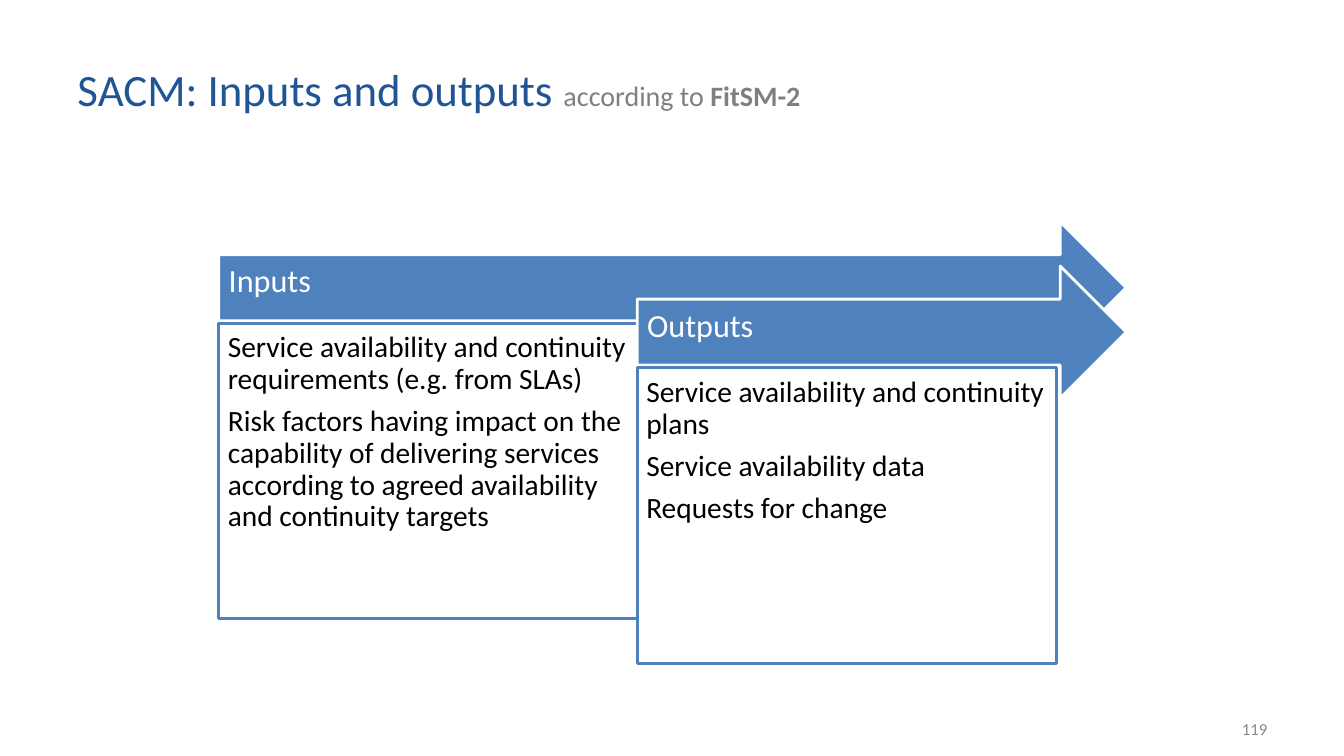
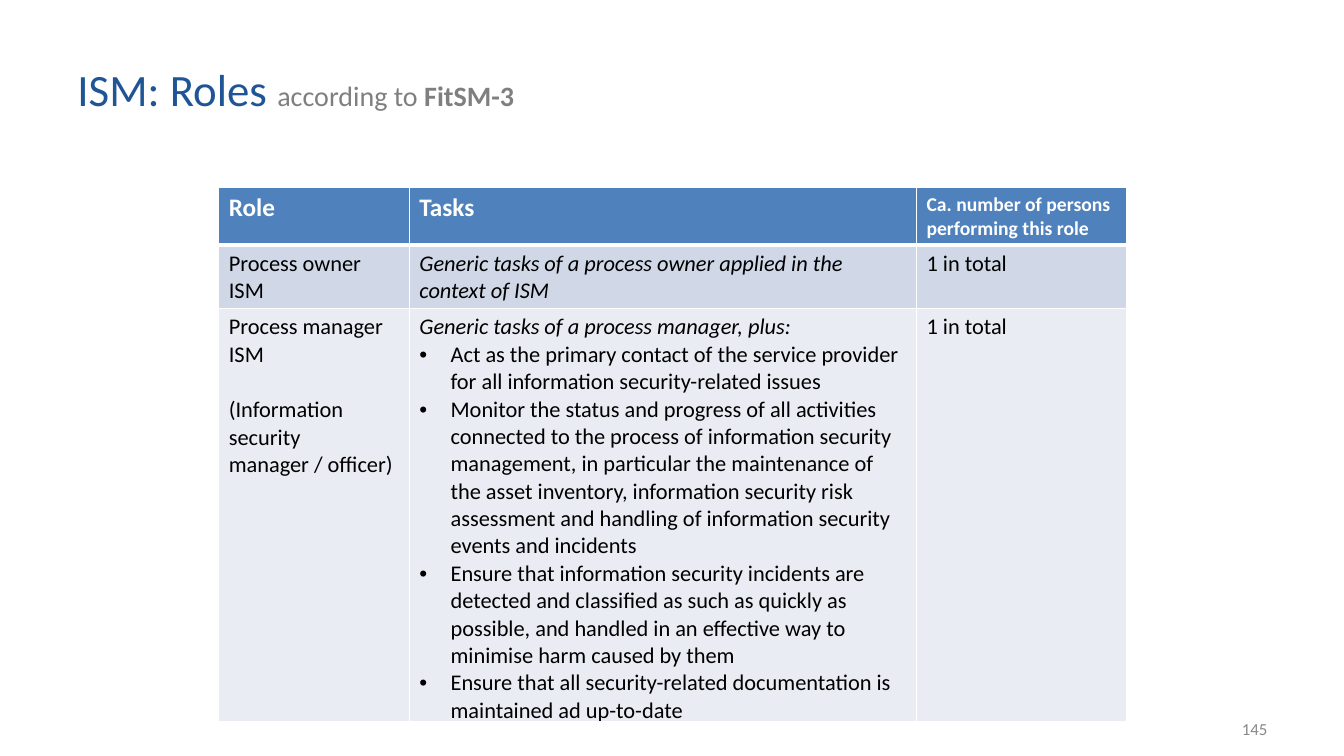
from dataclasses import dataclass

from lxml import etree
from pptx import Presentation
from pptx.dml.color import RGBColor
from pptx.enum.shapes import MSO_SHAPE
from pptx.enum.text import MSO_ANCHOR, PP_ALIGN
from pptx.oxml.ns import qn
from pptx.util import Pt

PX = 9144
ARROW = MSO_SHAPE.RIGHT_ARROW
RECTANGLE = MSO_SHAPE.RECTANGLE
LEFT, RIGHT = PP_ALIGN.LEFT, PP_ALIGN.RIGHT
TOP, MIDDLE = MSO_ANCHOR.TOP, MSO_ANCHOR.MIDDLE


@dataclass(frozen=True)
class Theme:
    font: str = "Calibri"
    title: str = "205595"
    subtitle: str = "7F7F7F"
    number: str = "888888"
    accent: str = "4F81BD"
    white: str = "FFFFFF"
    text: str = "000000"
    rows: tuple = ("4F81BD", "D0D8E7", "E9ECF3")
    title_size: int = 32
    subtitle_size: int = 20
    number_size: int = 12
    arrow_size: int = 23
    panel_size: int = 21
    head_size: int = 18
    small_head_size: int = 14
    cell_size: int = 16
    outline: int = 2
    thin: float = 0.96
    thick: int = 3


THEME = Theme()
CONTENT_LEFT, CONTENT_WIDTH = 217, 900

PANELS = (
    ("Inputs", (
        "Service availability and continuity requirements (e.g. from SLAs)",
        "Risk factors having impact on the capability of delivering services "
        "according to agreed availability and continuity targets",
    )),
    ("Outputs", (
        "Service availability and continuity plans",
        "Service availability data",
        "Requests for change",
    )),
)

HEAD = {"size": THEME.head_size, "color": THEME.white, "bold": True}
BODY = {"size": THEME.cell_size}
GENERIC = {**BODY, "italic": True}
BULLET = {**BODY, "bullet": True}

ROLE_ROWS = (
    (
        [("Role", HEAD)],
        [("Tasks", HEAD)],
        [("Ca. number of persons performing this role",
          {**HEAD, "size": THEME.small_head_size})],
    ),
    (
        [("Process owner ISM", BODY)],
        [("Generic tasks of a process owner applied in the context of ISM", GENERIC)],
        [("1 in total", BODY)],
    ),
    (
        [("Process manager ISM", BODY),
         ("(Information security manager / officer)", {**BODY, "before": 20})],
        [("Generic tasks of a process manager, plus:", GENERIC),
         ("Act as the primary contact of the service provider for all "
          "information security-related issues", BULLET),
         ("Monitor the status and progress of all activities connected to the "
          "process of information security management, in particular the "
          "maintenance of the asset inventory, information security risk "
          "assessment and handling of information security events and incidents",
          BULLET),
         ("Ensure that information security incidents are detected and classified "
          "as such as quickly as possible, and handled in an effective way to "
          "minimise harm caused by them", BULLET),
         ("Ensure that all security-related documentation is maintained ad "
          "up-to-date", BULLET)],
        [("1 in total", BODY)],
    ),
)


def rgb(color):
    return RGBColor.from_string(color)


def px(*lengths):
    return [length * PX for length in lengths]


def add_bullet(paragraph):
    properties = paragraph._p.get_or_add_pPr()
    properties.set("marL", str(31 * PX))
    properties.set("indent", str(-31 * PX))
    color = etree.SubElement(properties, qn("a:buClr"))
    etree.SubElement(color, qn("a:srgbClr"), val=THEME.text)
    etree.SubElement(properties, qn("a:buFont"), typeface="Arial")
    etree.SubElement(properties, qn("a:buChar"), char="•")


def add_text(frame, text, size, color=THEME.text, bold=False, italic=False,
             align=LEFT, before=0, spacing=None, bullet=False, joined=False):
    paragraph = frame.paragraphs[-1]
    if paragraph.runs and not joined:
        paragraph = frame.add_paragraph()
    if not joined:
        paragraph.alignment = align
        if before:
            paragraph.space_before = Pt(before)
        if spacing:
            paragraph.line_spacing = spacing
        if bullet:
            add_bullet(paragraph)
    span = paragraph.add_run()
    span.text = text
    font = span.font
    font.name, font.size = THEME.font, Pt(size)
    font.bold, font.italic = bold, italic
    font.color.rgb = rgb(color)


def set_frame(frame, anchor, insets):
    frame.word_wrap = True
    frame.vertical_anchor = anchor
    (frame.margin_left, frame.margin_top,
     frame.margin_right, frame.margin_bottom) = px(*insets)
    return frame


def add_box(page, left, top, width, height):
    box = page.shapes.add_textbox(*px(left, top, width, height))
    return set_frame(box.text_frame, MIDDLE, (10, 5, 10, 5))


def add_outlined(page, kind, position, fill, line, anchor, insets):
    shape = page.shapes.add_shape(kind, *px(*position))
    shape.shadow.inherit = False
    shape.fill.solid()
    shape.fill.fore_color.rgb = rgb(fill)
    shape.line.color.rgb = rgb(line)
    shape.line.width = Pt(THEME.outline)
    return set_frame(shape.text_frame, anchor, insets)


def add_page(deck, title, standard, number):
    page = deck.slides.add_slide(deck.slide_layouts[6])
    heading = add_box(page, 67, 30, 991, 115)
    subtitle = {"size": THEME.subtitle_size, "color": THEME.subtitle, "joined": True}
    add_text(heading, f"{title} ", size=THEME.title_size, color=THEME.title)
    add_text(heading, "according to ", **subtitle)
    add_text(heading, standard, bold=True, **subtitle)
    footer = add_box(page, 956, 703, 311, 40)
    add_text(footer, number, size=THEME.number_size, color=THEME.number, align=RIGHT)
    return page


def add_panel(page, index, name, items):
    shift = 415 * index
    left, top = CONTENT_LEFT + shift, 220 + 44 * index
    arrow = add_outlined(page, ARROW, (left, top, CONTENT_WIDTH - shift, 131),
                         THEME.accent, THEME.white, MIDDLE, (10, 10, 28, 21))
    add_text(arrow, name, size=THEME.arrow_size, color=THEME.white, spacing=0.9)
    panel = add_outlined(page, RECTANGLE, (left, top + 101, 416, 293),
                         THEME.white, THEME.accent, TOP, (9, 9, 9, 9))
    for position, item in enumerate(items):
        add_text(panel, item, size=THEME.panel_size, spacing=0.9,
                 before=7.3 if position else 0)


def add_border(cell, side, width):
    properties = cell._tc.get_or_add_tcPr()
    line = etree.SubElement(properties, qn(f"a:ln{side}"), w=str(int(Pt(width))))
    fill = etree.SubElement(line, qn("a:solidFill"))
    etree.SubElement(fill, qn("a:srgbClr"), val=THEME.white)


def fill_cell(cell, paragraphs, row_index):
    thick_sides = {0: "B", 1: "T"}
    for side in "LRTB":
        is_thick = thick_sides.get(row_index) == side
        add_border(cell, side, THEME.thick if is_thick else THEME.thin)
    cell.fill.solid()
    cell.fill.fore_color.rgb = rgb(THEME.rows[row_index])
    cell.margin_left, cell.margin_right = px(10, 10)
    cell.margin_top, cell.margin_bottom = px(5, 5)
    for text, text_format in paragraphs:
        add_text(cell.text_frame, text, **text_format)


def add_role_table(page):
    widths, heights = (189, 503, 208), (49, 54, 340)
    table = page.shapes.add_table(
        len(heights), len(widths),
        *px(CONTENT_LEFT, 186, CONTENT_WIDTH, sum(heights))).table
    for column, width in zip(table.columns, widths):
        column.width = width * PX
    for row, height in zip(table.rows, heights):
        row.height = height * PX
    for row_index, row in enumerate(ROLE_ROWS):
        for column_index, paragraphs in enumerate(row):
            fill_cell(table.cell(row_index, column_index), paragraphs, row_index)


def main():
    deck = Presentation()
    deck.slide_width, deck.slide_height = px(1333, 750)
    flow_page = add_page(deck, "SACM: Inputs and outputs", "FitSM-2", "119")
    for index, (name, items) in enumerate(PANELS):
        add_panel(flow_page, index, name, items)
    role_page = add_page(deck, "ISM: Roles", "FitSM-3", "145")
    add_role_table(role_page)
    deck.save("out.pptx")


if __name__ == "__main__":
    main()
